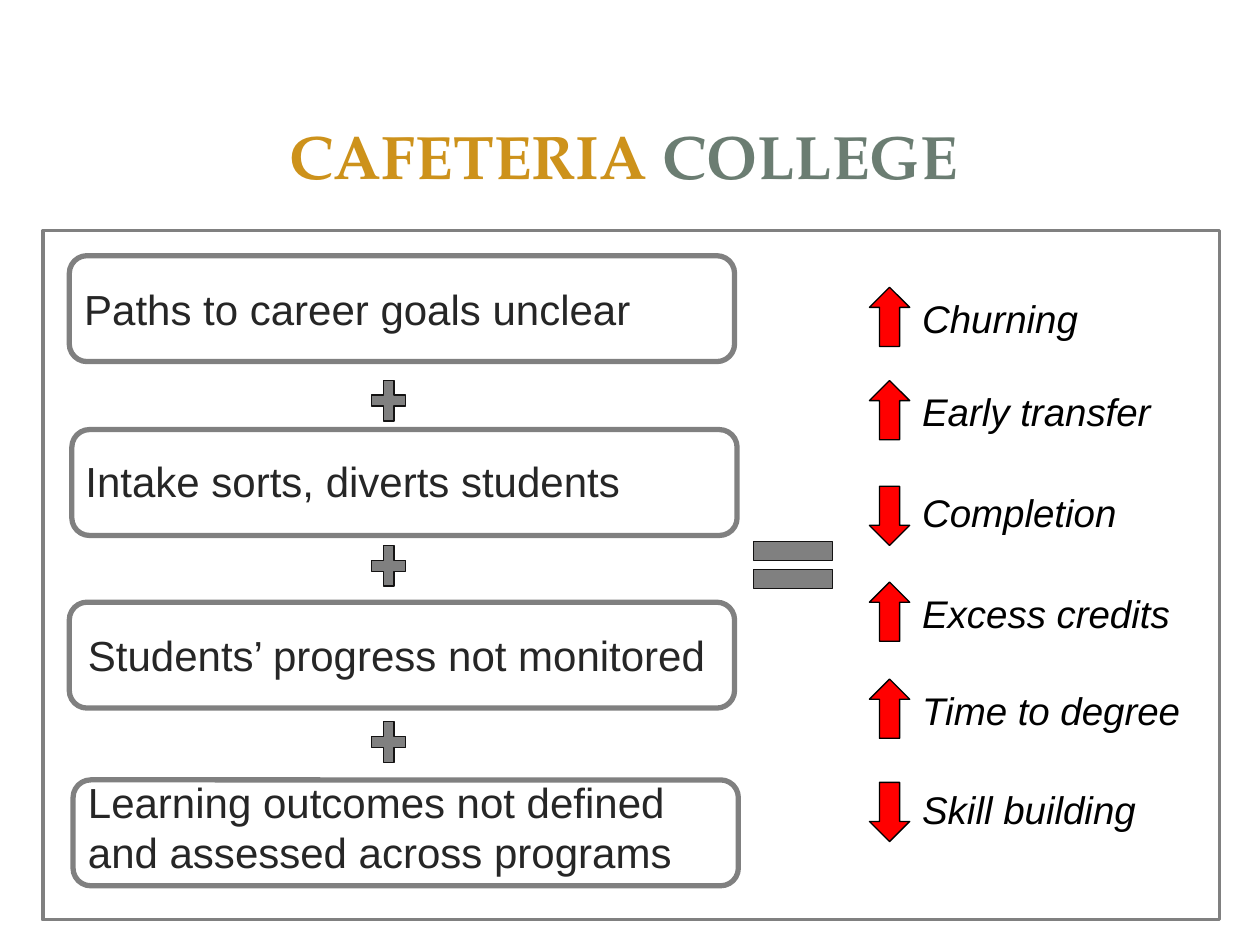
from pptx import Presentation
from pptx.dml.color import RGBColor
from pptx.enum.shapes import MSO_SHAPE
from pptx.enum.text import MSO_ANCHOR, PP_ALIGN
from pptx.util import Inches, Pt

GOLD = RGBColor(0xCD, 0x92, 0x1B)
SAGE = RGBColor(0x6B, 0x7D, 0x72)
GRAY = RGBColor(0x80, 0x80, 0x80)
CHARCOAL = RGBColor(0x26, 0x26, 0x26)
INK = RGBColor(0x14, 0x13, 0x13)
BLACK = RGBColor(0, 0, 0)
RED = RGBColor(0xFF, 0, 0)

TITLE_FONT = dict(name="TeX Gyre Pagella", size=Pt(35), bold=True)
CAUSE_FONT = dict(name="Arial", size=Pt(24))
EFFECT_FONT = dict(name="Arial", size=Pt(22), italic=True)

CAUSES = [
    ("Paths to career goals unclear", 0.55, 2.03, 0.57, 2.2),
    ("Intake sorts, diverts students", 0.57, 3.41, 0.58, 3.57),
    ("Students’ progress not monitored", 0.55, 4.78, 0.6, 4.95),
    ("Learning outcomes not defined and assessed across programs", 0.58, 6.19, 0.6, 6.11),
]
PLUS_TOPS = [2.96, 4.27, 5.67]
UP, DOWN = MSO_SHAPE.UP_ARROW, MSO_SHAPE.DOWN_ARROW
EFFECTS = [
    ("Churning", UP, 2.28, 2.29),
    ("Early transfer", UP, 3.02, 3.03),
    ("Completion", DOWN, 3.86, 3.83),
    ("Excess credits", UP, 4.62, 4.63),
    ("Time to degree", UP, 5.39, 5.4),
    ("Skill building", DOWN, 6.21, 6.19),
]


def add_run(paragraph, words, color, font_values):
    run = paragraph.add_run()
    run.text = words
    for key, value in font_values.items():
        setattr(run.font, key, value)
    run.font.color.rgb = color


def add_figure(slide, kind, box, line, weight, fill=None):
    figure = slide.shapes.add_shape(kind, *map(Inches, box))
    figure.shadow.inherit = False
    if fill is None:
        figure.fill.background()
    else:
        figure.fill.solid()
        figure.fill.fore_color.rgb = fill
    figure.line.color.rgb = line
    figure.line.width = Pt(weight)


def add_label(slide, words, box, color, font_values, wrap):
    frame = slide.shapes.add_textbox(*map(Inches, box)).text_frame
    frame.word_wrap = wrap
    add_run(frame.paragraphs[0], words, color, font_values)


def place_title(slide, box):
    title = slide.shapes.title
    title.left, title.top, title.width, title.height = map(Inches, box)
    title.text_frame.vertical_anchor = MSO_ANCHOR.MIDDLE
    heading = title.text_frame.paragraphs[0]
    heading.alignment = PP_ALIGN.CENTER
    add_run(heading, "CAFETERIA ", GOLD, TITLE_FONT)
    add_run(heading, "COLLEGE", SAGE, TITLE_FONT)


def place_causes(slide, box):
    left, top, width, height = box
    for words, card_left, card_top, text_left, text_top in CAUSES:
        card = (left + card_left - 0.55, top + card_top - 2.03, width, 0.84)
        add_figure(slide, MSO_SHAPE.ROUNDED_RECTANGLE, card, GRAY, 3)
        label = (left + text_left - 0.55, top + text_top - 2.03, width - 0.18, 0.5)
        add_label(slide, words, label, CHARCOAL, CAUSE_FONT, True)
    for plus_top in PLUS_TOPS:
        plus = (left + 2.35, top + plus_top - 2.03, 0.37, 0.44)
        add_figure(slide, MSO_SHAPE.MATH_PLUS, plus, INK, 0.75, GRAY)


def place_effects(slide, box):
    left, top, width, height = box
    for words, arrow, arrow_top, text_top in EFFECTS:
        add_figure(slide, arrow, (left, top + arrow_top - 2.28, 0.32, 0.47), BLACK, 0.75, RED)
        label = (left + 0.32, top + text_top - 2.28, width - 0.32, 0.47)
        add_label(slide, words, label, BLACK, EFFECT_FONT, False)


def main():
    deck = Presentation()
    deck.slide_width, deck.slide_height = Inches(10), Inches(7.5)
    slide = deck.slides.add_slide(deck.slide_layouts[5])
    place_title(slide, (0.49, 0.83, 8.92, 0.8))
    place_causes(slide, (0.55, 2.03, 5.28, 5))
    add_figure(slide, MSO_SHAPE.MATH_EQUAL, (5.87, 4.17, 0.85, 0.63), INK, 0.75, GRAY)
    place_effects(slide, (6.9, 2.28, 2.67, 4.4))
    add_figure(slide, MSO_SHAPE.RECTANGLE, (0.34, 1.83, 9.34, 5.47), GRAY, 2)
    deck.save("out.pptx")


if __name__ == "__main__":
    main()
